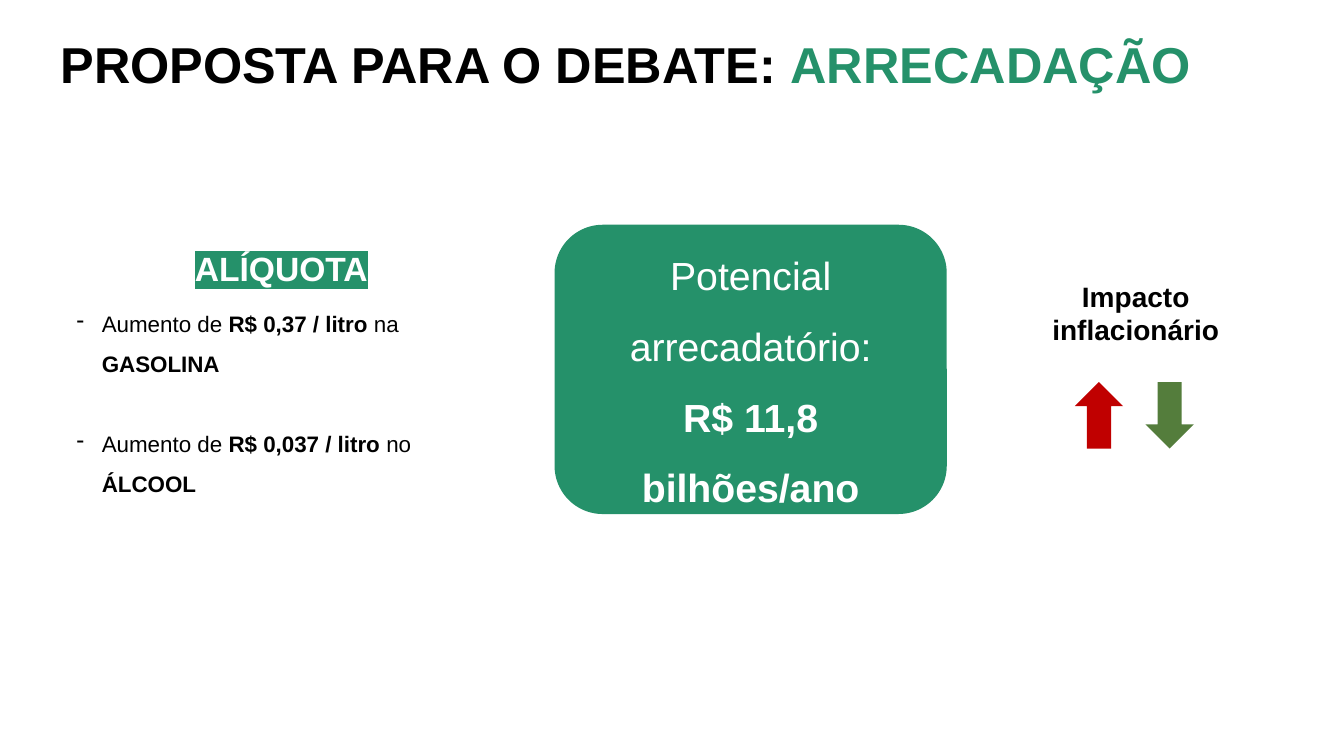
"""Builds the slide on the fuel tax proposal and its revenue."""
import pptx
import pptx.util
import pptx.dml.color
import pptx.enum.shapes
import pptx.enum.text
import pptx.oxml
import pptx.oxml.ns

HUES = {"green": "25916A", "black": "000000", "white": "FFFFFF",
        "red": "C00000", "leaf": "547D3C"}
TITLE = [[("PROPOSTA PARA O DEBATE: ", "black", True), ("ARRECADAÇÃO", "green", True)]]
HEAD = ("ALÍQUOTA", "white", True)
RATES = [
    [("Aumento de ", "black", False), ("R$ 0,37 / litro ", "black", True),
     ("na", "black", False), (" GASOLINA", "black", True)],
    [("Aumento de ", "black", False), ("R$ 0,037 / litro", "black", True),
     (" no", "black", False), (" ÁLCOOL", "black", True)],
]
GAPS = [6.1, 28]
YIELD = [[("Potencial arrecadatório:", "white", False)],
         [("R$ 11,8 bilhões/ano", "white", True)]]
IMPACT = [[("Impacto inflacionário", "black", True)]]
ARROWS = [("red", 0), ("leaf", 180)]

Inches, Pt = pptx.util.Inches, pptx.util.Pt
ALIGN = pptx.enum.text.PP_ALIGN
ANCHOR = pptx.enum.text.MSO_ANCHOR
KINDS = pptx.enum.shapes.MSO_SHAPE


def tint(name):
    return pptx.dml.color.RGBColor.from_string(HUES[name])


def put(item, values):
    for key, value in values.items():
        setattr(item, key, value)


def frame(shape, pad=0.06, anchor=ANCHOR.TOP):
    text = shape.text_frame
    put(text, {"word_wrap": True, "vertical_anchor": anchor,
               "auto_size": pptx.enum.text.MSO_AUTO_SIZE.NONE,
               "margin_left": Inches(0.06), "margin_right": Inches(0.06),
               "margin_top": Inches(pad), "margin_bottom": Inches(pad)})
    return text


def write(para, runs, size, **form):
    put(para, form)
    for words, hue, bold in runs:
        run = para.add_run()
        run.text = words
        put(run.font, {"name": "Arial", "size": Pt(size), "bold": bold})
        run.font.color.rgb = tint(hue)


def fill(text, paras, size, **form):
    for i, runs in enumerate(paras):
        para = text.add_paragraph() if i else text.paragraphs[0]
        write(para, runs, size, **form)


def node(xml):
    return pptx.oxml.parse_xml(xml.replace(
        ">", " " + pptx.oxml.ns.nsdecls("a") + ">", 1))


def mark(run, hue):
    color = run.font.fill._xPr.find(pptx.oxml.ns.qn("a:solidFill"))
    color.addnext(node(f'<a:highlight><a:srgbClr val="{HUES[hue]}"/></a:highlight>'))


def dash(para):
    props = para._p.get_or_add_pPr()
    props.set("marL", str(Inches(0.3)))
    props.set("indent", str(Inches(-0.25)))
    props.append(node(f'<a:buClr><a:srgbClr val="{HUES["black"]}"/></a:buClr>'))
    props.append(node('<a:buChar char="-"></a:buChar>'))


def draw(slide, kind, place, hue):
    shape = slide.shapes.add_shape(kind, *map(Inches, place))
    shape.shadow.inherit = False
    shape.fill.solid()
    shape.fill.fore_color.rgb = tint(hue)
    shape.line.fill.background()
    return shape


def main():
    deck = pptx.Presentation()
    put(deck, {"slide_width": Inches(13.33), "slide_height": Inches(7.5)})
    slide = deck.slides.add_slide(deck.slide_layouts[5])

    title = slide.shapes.title
    put(title, {"left": Inches(0.54), "top": Inches(0.3),
                "width": Inches(11.88), "height": Inches(0.67)})
    fill(frame(title, 0.03), TITLE, 36, alignment=ALIGN.LEFT)

    box = slide.shapes.add_textbox(*map(Inches, (0.65, 2.2, 4.28, 2.91)))
    text = frame(box)
    fill(text, [[HEAD]], 24, alignment=ALIGN.CENTER, line_spacing=1.5)
    mark(text.paragraphs[0].runs[0], "green")
    for runs, gap in zip(RATES, GAPS):
        para = text.add_paragraph()
        write(para, runs, 16, line_spacing=1.5, space_before=Pt(gap))
        dash(para)

    card = draw(slide, KINDS.ROUNDED_RECTANGLE, (5.5, 2.23, 3.89, 2.87), "green")
    fill(frame(card, anchor=ANCHOR.MIDDLE), YIELD, 28,
         alignment=ALIGN.CENTER, line_spacing=1.5)

    label = slide.shapes.add_textbox(*map(Inches, (10.35, 2.71, 1.83, 0.95)))
    fill(frame(label), IMPACT, 20, alignment=ALIGN.CENTER)

    for i, (hue, turn) in enumerate(ARROWS):
        arrow = draw(slide, KINDS.UP_ARROW, (10.66 + 0.7 * i, 3.79, 0.48, 0.66), hue)
        arrow.rotation = turn

    deck.save("out.pptx")


if __name__ == "__main__":
    main()
